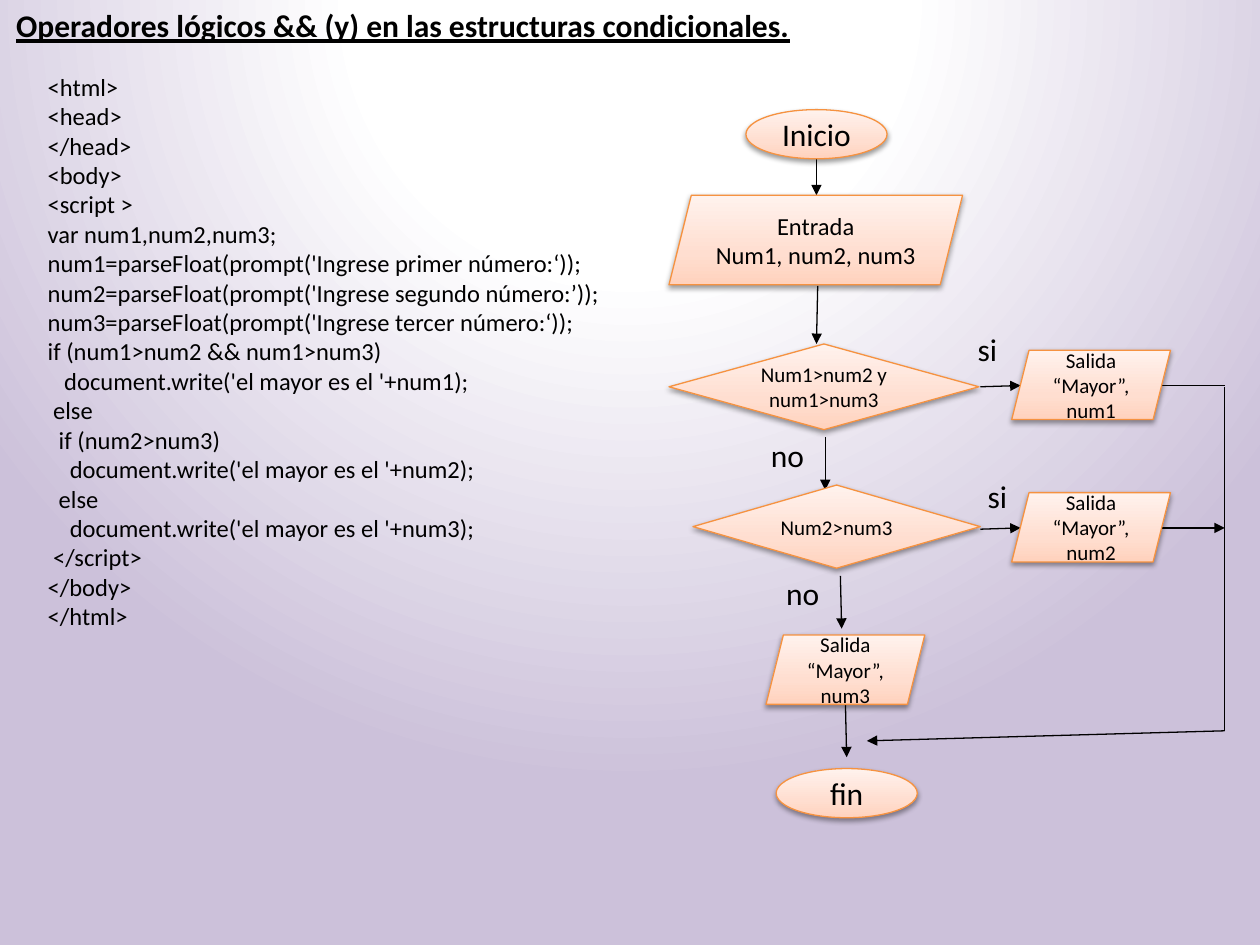
from dataclasses import dataclass

from lxml import etree
from pptx import Presentation
from pptx.dml.color import RGBColor
from pptx.enum.shapes import MSO_CONNECTOR, MSO_SHAPE
from pptx.enum.text import MSO_ANCHOR, MSO_AUTO_SIZE, PP_ALIGN
from pptx.oxml.ns import qn
from pptx.util import Inches, Pt

OVAL = MSO_SHAPE.OVAL
SLANT = MSO_SHAPE.PARALLELOGRAM
RHOMB = MSO_SHAPE.DIAMOND
LINE = MSO_CONNECTOR.STRAIGHT
MIDDLE = MSO_ANCHOR.MIDDLE
CENTER = PP_ALIGN.CENTER
GROW = MSO_AUTO_SIZE.SHAPE_TO_FIT_TEXT

WIDTH, HEIGHT = Inches(10), Inches(7.5)
COLS, ROWS = 100, 75
STEP = 11.3


@dataclass(frozen=True)
class Theme:
    font: str = "Calibri"
    ink: str = "000000"
    edge: str = "F69240"
    fill: tuple = ((0, "FFD2BD"), (35, "FFDED0"), (100, "FFF2ED"))
    back: tuple = ((0, "FFFFFF"), (35, "FFFFFF"), (100, "CCC1DA"))
    big: int = 18
    mid: int = 14
    small: int = 12
    rule: float = 0.75
    space: float = 3.16


THEME = Theme()


@dataclass(frozen=True)
class Node:
    kind: int
    left: float
    top: float
    wide: float
    high: float
    text: str
    size: int


@dataclass(frozen=True)
class Label:
    left: float
    top: float
    wide: float
    high: float
    text: str
    size: int = THEME.big
    strong: bool = False


@dataclass(frozen=True)
class Link:
    x1: float
    y1: float
    x2: float
    y2: float
    arrow: bool = True


TITLE = Label(0.3, 0, 68.5, 4,
              "Operadores lógicos && (y) en las estructuras condicionales.", strong=True)

CODE = (
    (0, "<html>"),
    (0, "<head>"),
    (0, "</head>"),
    (0, "<body>"),
    (0, "<script >"),
    (0, "var num1,num2,num3;"),
    (0, "num1=parseFloat(prompt('Ingrese primer número:‘));"),
    (0, "num2=parseFloat(prompt('Ingrese segundo número:’));"),
    (0, "num3=parseFloat(prompt('Ingrese tercer número:‘));"),
    (0, "if (num1>num2 && num1>num3)"),
    (3, "document.write('el mayor es el '+num1);"),
    (1, "else"),
    (2, "if (num2>num3)"),
    (4, "document.write('el mayor es el '+num2);"),
    (2, "else"),
    (4, "document.write('el mayor es el '+num3);"),
    (1, "</script>"),
    (0, "</body>"),
    (0, "</html>"),
)

NODES = [
    Node(OVAL, 59.2, 8.7, 11.2, 3.9, "Inicio", THEME.big),
    Node(SLANT, 53.1, 15.5, 23.3, 7.1, "Entrada\nNum1, num2, num3", THEME.mid),
    Node(RHOMB, 53.1, 27.3, 24.6, 6.8, "Num1>num2 y num1>num3", THEME.small),
    Node(RHOMB, 55, 38.5, 22.8, 6.6, "Num2>num3", THEME.small),
    Node(OVAL, 61.6, 61, 11.2, 3.9, "fin", THEME.big),
] + [
    Node(SLANT, left, 27.8 + STEP * row, 12.6, 5.5,
         f"Salida\n“Mayor”, num{row + 1}", THEME.small)
    for row, left in enumerate((80.3, 80.3, 60.8))
]

LABELS = (
    Label(76.6, 25.7, 3.9, 4, "si"),
    Label(77.4, 37.4, 3.9, 4, "si"),
    Label(60.2, 34.1, 5.1, 4, "no"),
    Label(61.4, 45.1, 5.1, 4, "no"),
)

LINKS = [
    Link(64.8, 12.6, 64.8, 15.5),
    Link(64.9, 22.7, 64.8, 27.3),
    Link(65.5, 34.7, 65.5, 38.9),
    Link(66.7, 45.7, 66.8, 49.9),
    Link(67.1, 55.9, 67.2, 60.1),
    Link(97.2, 30.7, 97.2, 58, False),
    Link(97.2, 58, 68.8, 58.8),
]
for row in range(2):
    drop = STEP * row
    LINKS += [
        Link(77.8, 30.7 + drop, 81, 30.6 + drop),
        Link(92.2, 30.6 + drop, 97.2, 30.6 + drop, row == 1),
    ]


def col(num: float) -> int:
    return round(WIDTH * num / COLS)


def line(num: float) -> int:
    return round(HEIGHT * num / ROWS)


def frame(item: Node | Label) -> tuple:
    return col(item.left), line(item.top), col(item.wide), line(item.high)


def add(root, tag: str, **attrs):
    return etree.SubElement(root, qn(tag), {key: str(val) for key, val in attrs.items()})


def shade(root, stops: tuple):
    flat = root.find(f".//{qn('a:solidFill')}")
    grad = etree.Element(qn("a:gradFill"), rotWithShape="1")
    flat.getparent().replace(flat, grad)
    items = add(grad, "a:gsLst")
    for pos, tint in stops:
        stop = add(items, "a:gs", pos=pos * 1000)
        add(stop, "a:srgbClr", val=tint)
    return grad


def style(text, size: int, strong: bool = False) -> None:
    for para in text.paragraphs:
        for run in para.runs:
            font = run.font
            font.name, font.size = THEME.font, Pt(size)
            font.color.rgb = RGBColor.from_string(THEME.ink)
            if strong:
                font.bold = font.underline = True


def paint(slide) -> None:
    slide.background.fill.solid()
    grad = shade(slide.element, THEME.back)
    path = add(grad, "a:path", path="circle")
    add(path, "a:fillToRect", l=50000, t=-80000, r=50000, b=180000)


def write(slide, label: Label):
    text = slide.shapes.add_textbox(*frame(label)).text_frame
    text.text = label.text
    text.word_wrap = False
    text.auto_size = GROW
    style(text, label.size, label.strong)
    return text


def list_code(slide) -> None:
    body = "\n".join(words for _, words in CODE)
    text = write(slide, Label(2.8, 5.2, 46.5, 45.8, body, THEME.mid))
    for para, (depth, _) in zip(text.paragraphs, CODE):
        if depth:
            props = para._p.get_or_add_pPr()
            props.set("marL", str(Pt(depth * THEME.space)))
            props.set("indent", "0")


def draw(slide, node: Node) -> None:
    shape = slide.shapes.add_shape(node.kind, *frame(node))
    shape.fill.solid()
    grad = shade(shape.element.spPr, THEME.fill)
    add(grad, "a:lin", ang=270 * 60000, scaled=1)
    shape.line.color.rgb = RGBColor.from_string(THEME.edge)
    shape.line.width = Pt(THEME.rule)
    shape.shadow.inherit = False
    glow = add(shape.element.spPr.find(qn("a:effectLst")), "a:outerShdw",
               blurRad=Pt(3.1), dist=Pt(1.6), dir=90 * 60000, rotWithShape=0)
    add(add(glow, "a:srgbClr", val=THEME.ink), "a:alpha", val=38000)
    text = shape.text_frame
    text.text = node.text
    text.word_wrap = True
    text.vertical_anchor = MIDDLE
    for para in text.paragraphs:
        para.alignment = CENTER
    style(text, node.size)


def join(slide, link: Link) -> None:
    wire = slide.shapes.add_connector(
        LINE, col(link.x1), line(link.y1), col(link.x2), line(link.y2))
    wire.line.color.rgb = RGBColor.from_string(THEME.ink)
    wire.line.width = Pt(THEME.rule)
    if link.arrow:
        add(wire.line._get_or_add_ln(), "a:tailEnd", type="triangle")
    add(wire.element.spPr, "a:effectLst")


def main() -> None:
    deck = Presentation()
    deck.slide_width, deck.slide_height = WIDTH, HEIGHT
    slide = deck.slides.add_slide(deck.slide_layouts[6])
    paint(slide)
    write(slide, TITLE)
    list_code(slide)
    for link in LINKS:
        join(slide, link)
    for node in NODES:
        draw(slide, node)
    for label in LABELS:
        write(slide, label)
    deck.save("out.pptx")


if __name__ == "__main__":
    main()
